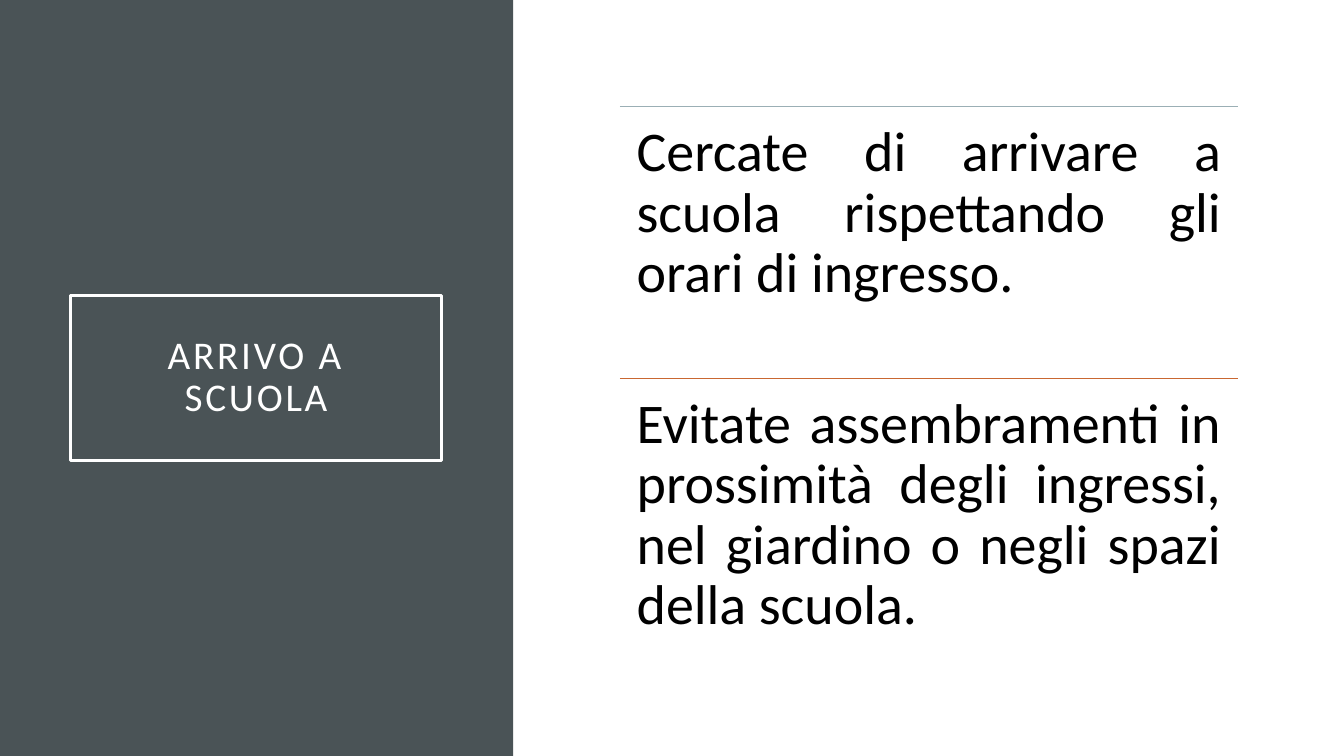
from dataclasses import dataclass

from pptx import Presentation
from pptx.dml.color import RGBColor
from pptx.enum.shapes import MSO_CONNECTOR, MSO_SHAPE
from pptx.enum.text import MSO_ANCHOR, PP_ALIGN
from pptx.oxml.ns import qn
from pptx.util import Pt

RECT = MSO_SHAPE.RECTANGLE
STRAIGHT = MSO_CONNECTOR.STRAIGHT
TOP, MIDDLE = MSO_ANCHOR.TOP, MSO_ANCHOR.MIDDLE
CENTER, JUSTIFY = PP_ALIGN.CENTER, PP_ALIGN.JUSTIFY

TITLE = "ARRIVO A SCUOLA"
RULES = [  # text, line colour
    ("Cercate di arrivare a scuola rispettando gli orari di ingresso.", "9BAFB5"),
    ("Evitate assembramenti in prossimità degli ingressi, nel giardino "
     "o negli spazi della scuola.", "C96731"),
]


@dataclass(frozen=True)
class Theme:
    font: str = "Calibri"
    panel: str = "4A5356"
    light: str = "FFFFFF"
    dark: str = "000000"
    title_size: float = 28
    body_size: float = 40


THEME = Theme()
SLIDE_W, SLIDE_H = 960, 540
PANEL_W = 366.5
TITLE_BOX = (50.4, 211, 265, 118)
LIST_LEFT, LIST_TOP, LIST_W, ROW_H = 442.8, 76.3, 441.4, 193.7


def rgb(value):
    return RGBColor.from_string(value)


def write(shape, text, *, size, color, align, anchor, inset, tracking=0):
    tf = shape.text_frame
    tf.word_wrap = True
    tf.vertical_anchor = anchor
    tf.margin_left = tf.margin_right = Pt(inset)
    tf.margin_top = tf.margin_bottom = Pt(inset)
    p = tf.paragraphs[0]
    p.alignment = align
    p.line_spacing = 0.9
    r = p.add_run()
    r.text = text
    r.font.name = THEME.font
    r.font.size = Pt(size)
    r.font.color.rgb = rgb(color)
    if tracking:
        r.font._element.set("spc", str(tracking * 100))


def add_rect(s, box, fill=None, line=None, width=0):
    sp = s.shapes.add_shape(RECT, *map(Pt, box))
    sp.shadow.inherit = False
    if fill:
        sp.fill.solid()
        sp.fill.fore_color.rgb = rgb(fill)
    else:
        sp.fill.background()
    if line:
        sp.line.color.rgb = rgb(line)
        sp.line.width = Pt(width)
    else:
        sp.line.fill.background()
    return sp


def add_divider(s, y, color):
    line = s.shapes.add_connector(
        STRAIGHT, Pt(LIST_LEFT), Pt(y), Pt(LIST_LEFT + LIST_W), Pt(y))
    line.line.color.rgb = rgb(color)
    line.line.width = Pt(0.5)
    sp_pr = line._element.spPr
    sp_pr.append(sp_pr.makeelement(qn("a:effectLst"), {}))


def main():
    prs = Presentation()
    prs.slide_width, prs.slide_height = Pt(SLIDE_W), Pt(SLIDE_H)
    s = prs.slides.add_slide(prs.slide_layouts[6])

    add_rect(s, (0, 0, PANEL_W, SLIDE_H), fill=THEME.panel)
    title = add_rect(s, TITLE_BOX, line=THEME.light, width=2.5)
    write(title, TITLE, size=THEME.title_size, color=THEME.light,
          align=CENTER, anchor=MIDDLE, inset=16, tracking=2)

    for i, (text, color) in enumerate(RULES):
        y = LIST_TOP + i * ROW_H
        add_divider(s, y, color)
        box = s.shapes.add_textbox(Pt(LIST_LEFT), Pt(y), Pt(LIST_W), Pt(ROW_H))
        write(box, text, size=THEME.body_size, color=THEME.dark,
              align=JUSTIFY, anchor=TOP, inset=12)

    prs.save("out.pptx")


if __name__ == "__main__":
    main()
